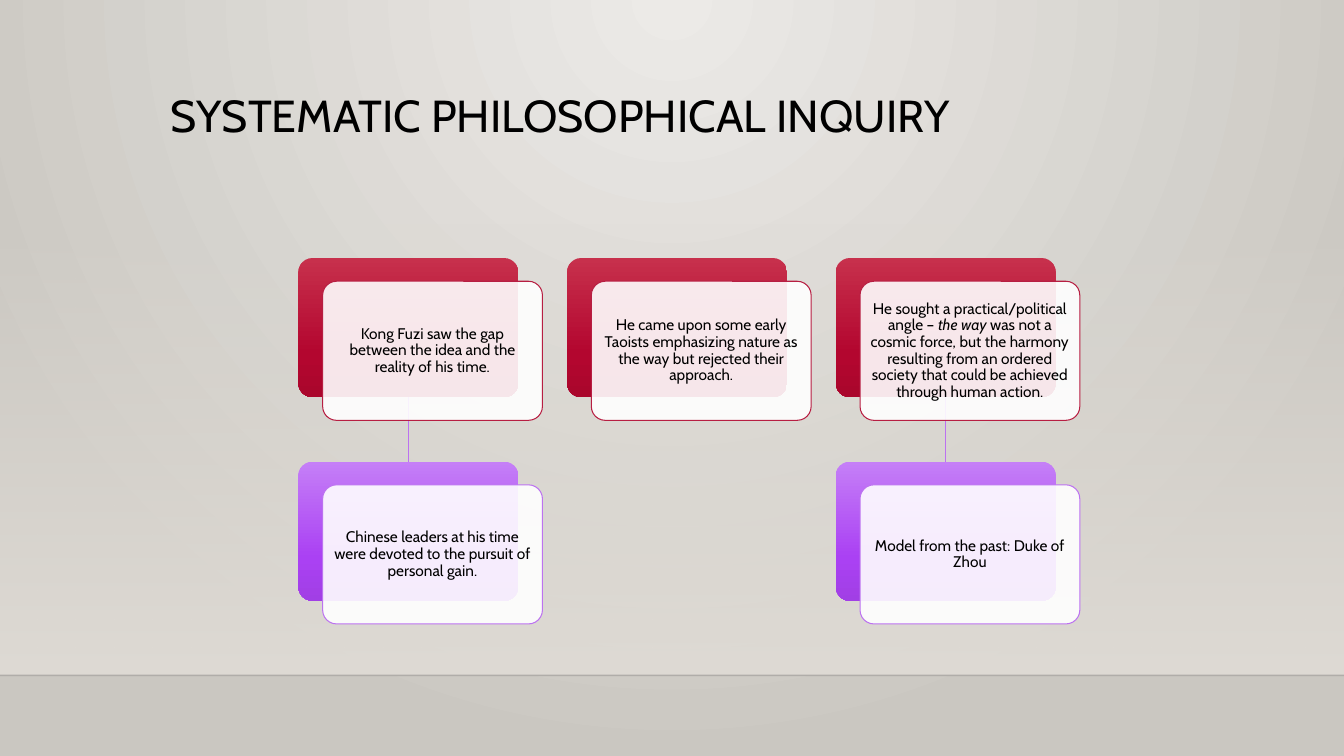
from lxml import etree
from pptx import Presentation
from pptx import util as u
from pptx.dml.color import RGBColor
from pptx.enum import shapes, text
from pptx.oxml import parse_xml
from pptx.oxml.ns import nsdecls, qn

FONT = "Cabin"
BLACK = RGBColor(0, 0, 0)
WHITE = RGBColor(255, 255, 255)
RED = RGBColor(0xB7, 0x1E, 0x42)
VIOLET = RGBColor(0xBC, 0x72, 0xF0)
SAND = RGBColor(0xDF, 0xDB, 0xD5)
PALE = RGBColor(0xEC, 0xEA, 0xE7)
STONE = RGBColor(0xCA, 0xC7, 0xC1)
REDS = [(0, RGBColor(0xC7, 0x30, 0x4C), 100), (69, RGBColor(0xB3, 0x06, 0x2F), 100),
        (100, RGBColor(0xAA, 0x06, 0x2C), 100)]
VIOLETS = [(0, RGBColor(0xC5, 0x7F, 0xF7), 100), (69, RGBColor(0xAA, 0x41, 0xF3), 100),
           (100, RGBColor(0xA1, 0x3F, 0xE5), 100)]
DOWN = '<a:lin ang="5400000" scaled="0"/>'
GLOW = ('<a:path path="circle"><a:fillToRect l="43000" t="0" r="43000" b="100000"/>'
        '</a:path>')

CARD_W, CARD_H = 2.18, 1.38
STEP_X, STEP_Y = 2.665, 2.02
SHIFT_X, SHIFT_Y = 0.24, 0.23

# (column, row) -> runs of (text, italic)
CARDS = {
    (0, 0): [("Kong Fuzi saw the gap between the idea and the reality of his time.", False)],
    (0, 1): [("Chinese leaders at his time were devoted to the pursuit of personal gain.",
              False)],
    (1, 0): [("He came upon some early Taoists emphasizing nature as the way but rejected "
              "their approach.", False)],
    (2, 0): [("He sought a practical/political angle – ", False), ("the way", True),
             (" was not a cosmic force, but the harmony resulting from an ordered society "
              "that could be achieved through human action.", False)],
    (2, 1): [("Model from the past: Duke of Zhou", False)],
}


def fade(fill, root, stops, shade):
    """Give a fill a gradient of (percent, colour, opacity) stops."""
    fill.solid()
    marks = "".join(
        f'<a:gs pos="{pos * 1000}"><a:srgbClr val="{hue}">'
        f'<a:alpha val="{alpha * 1000}"/></a:srgbClr></a:gs>'
        for pos, hue, alpha in stops)
    grad = parse_xml(f'<a:gradFill {nsdecls("a")} rotWithShape="1">'
                     f'<a:gsLst>{marks}</a:gsLst>{shade}</a:gradFill>')
    old = root.find(".//" + qn("a:solidFill"))
    old.getparent().replace(old, grad)


def dim(root, alpha):
    """Set the opacity, in percent, of the first plain colour under root."""
    hue = root.find(".//" + qn("a:srgbClr"))
    etree.SubElement(hue, qn("a:alpha")).set("val", str(alpha * 1000))


def write(shape, runs, size, align, anchor, inset):
    frame = shape.text_frame
    frame.word_wrap = True
    frame.vertical_anchor = anchor
    frame.margin_left = frame.margin_right = u.Inches(inset)
    frame.margin_top = frame.margin_bottom = u.Inches(0.05)
    para = frame.paragraphs[0]
    para.alignment = align
    para.line_spacing = 0.9
    for words, slant in runs:
        run = para.add_run()
        run.text = words
        font = run.font
        font.name, font.size, font.italic = FONT, u.Pt(size), slant
        font.color.rgb = BLACK


def block(slide, kind, left, top, width, height):
    shape = slide.shapes.add_shape(kind, *map(u.Inches, (left, top, width, height)))
    shape.shadow.inherit = False
    shape.line.fill.background()
    return shape


def card(slide, left, top):
    shape = block(slide, shapes.MSO_SHAPE.ROUNDED_RECTANGLE, left, top, CARD_W, CARD_H)
    shape.adjustments[0] = 0.1
    return shape


def rule(slide, ends, hue, width):
    line = slide.shapes.add_connector(shapes.MSO_CONNECTOR.STRAIGHT, *map(u.Inches, ends))
    line.line.color.rgb = hue
    line.line.width = u.Pt(width)
    etree.SubElement(line.element.spPr, qn("a:effectLst"))
    return line


def stage(slide, width, floor):
    """Draw the lit wall and the edge of the floor."""
    fade(slide.background.fill, slide.element.cSld.find(qn("p:bg")),
         [(0, PALE, 100), (100, STONE, 100)], GLOW)
    wall = block(slide, shapes.MSO_SHAPE.RECTANGLE, 0, 2.21, width, floor - 2.21)
    fade(wall.fill, wall.element.spPr, [(0, SAND, 0), (100, SAND, 100)], DOWN)
    edge = rule(slide, (0, floor, width, floor), RGBColor(0, 0, 1), 1)
    dim(edge.element.spPr, 20)


def title(slide, left, top, width, height):
    box = slide.shapes.add_textbox(*map(u.Inches, (left, top, width, height)))
    write(box, [("SYSTEMATIC PHILOSOPHICAL INQUIRY", False)], 32,
          text.PP_ALIGN.LEFT, text.MSO_ANCHOR.TOP, 0.1)


def tree(slide, left, top):
    """Draw the cards: coloured backs, links between rows, then white fronts."""
    spots = {key: (left + key[0] * STEP_X, top + key[1] * STEP_Y) for key in CARDS}
    backs = {}
    for key, (x, y) in spots.items():
        back = backs[key] = card(slide, x, y)
        fade(back.fill, back.element.spPr, VIOLETS if key[1] else REDS, DOWN)
    for col, row in CARDS:
        if row:
            link = rule(slide, (0, 0, 0, 0), VIOLET, 0.75)
            link.begin_connect(backs[col, row - 1], 2)
            link.end_connect(backs[col, row], 0)
    for key, (x, y) in spots.items():
        front = card(slide, x + SHIFT_X, y + SHIFT_Y)
        front.fill.solid()
        front.fill.fore_color.rgb = WHITE
        dim(front.element.spPr, 90)
        front.line.color.rgb = VIOLET if key[1] else RED
        front.line.width = u.Pt(0.75)
        write(front, CARDS[key], 11, text.PP_ALIGN.CENTER, text.MSO_ANCHOR.MIDDLE, 0.05)


def main():
    deck = Presentation()
    deck.slide_width, deck.slide_height = u.Inches(13.33), u.Inches(7.5)
    slide = deck.slides.add_slide(deck.slide_layouts[6])
    stage(slide, 13.33, 6.7)
    title(slide, 1.59, 0.88, 10.5, 1.15)
    tree(slide, 2.96, 2.56)
    deck.save("out.pptx")


if __name__ == "__main__":
    main()
